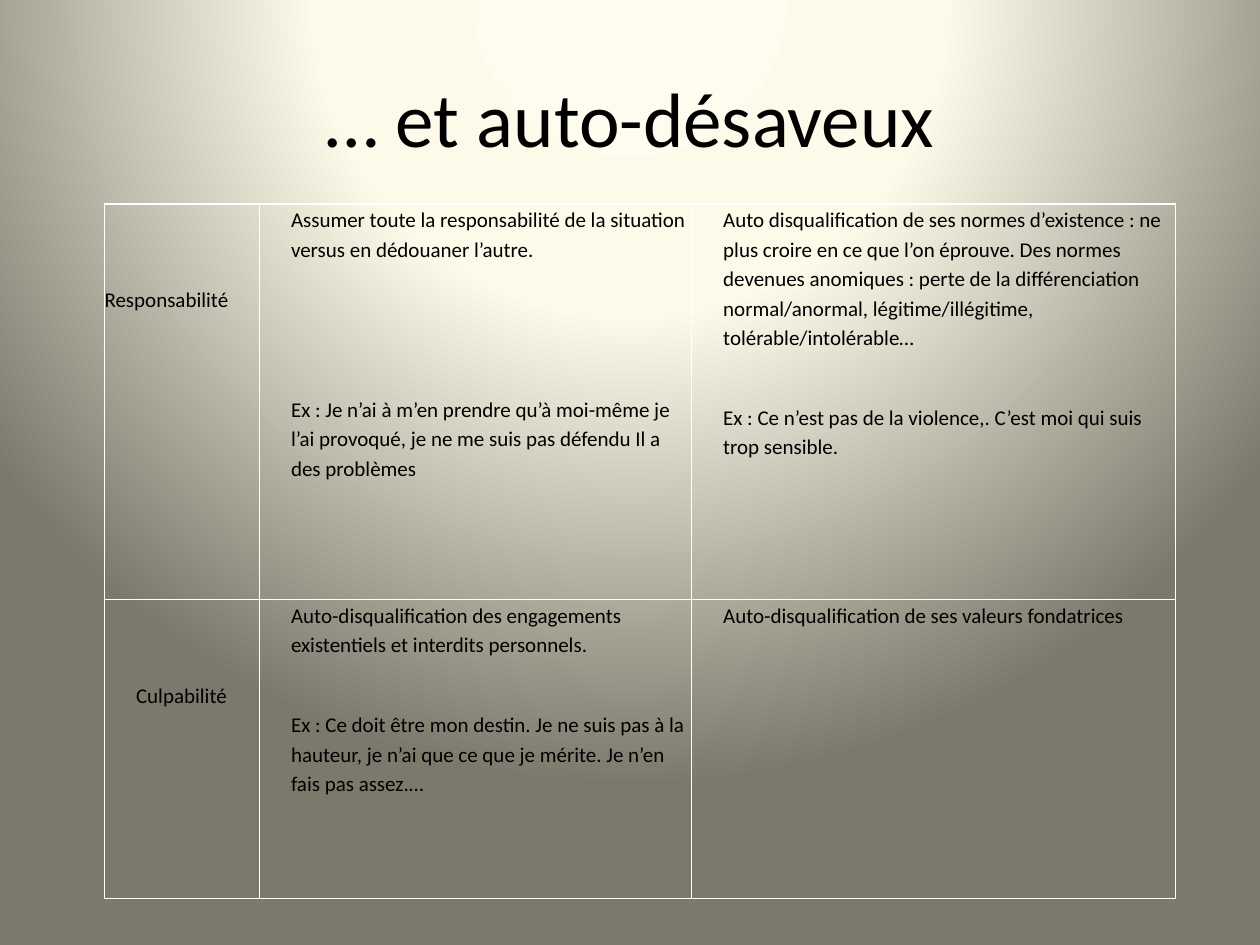
from pptx import Presentation
from pptx.dml.color import RGBColor
from pptx.enum.text import MSO_ANCHOR, PP_ALIGN
from pptx.oxml import parse_xml
from pptx.oxml.ns import nsdecls
from pptx.util import Inches, Pt

COLORS = {
    "text": "000000",
    "border": "FFFFFF",
    "glow": "FEFCEE",
    "cream": "FDFAEA",
    "olive": "7B796B",
}
BODY = {"alignment": PP_ALIGN.LEFT, "line_spacing": 1.15, "space_after": Pt(6)}
LABEL = {**BODY, "alignment": PP_ALIGN.JUSTIFY}
BLANK_LINE = 22.85
COLUMN_WIDTHS = [1.23, 3.43, 3.84]
ROW_HEIGHTS = [3.14, 2.37]
INDENT = 0.25

ROWS = [
    [
        {"texts": ["Responsabilité"], "format": LABEL, "top_lines": 2, "indent": 0},
        {
            "texts": [
                "Assumer toute la responsabilité de la situation versus en dédouaner l’autre.",
                "Ex : Je n’ai à m’en prendre qu’à moi-même je l’ai provoqué, "
                "je ne me suis pas défendu Il a des problèmes",
            ],
            "gap_lines": 3,
        },
        {
            "texts": [
                "Auto disqualification de ses normes d’existence : ne plus croire en ce que "
                "l’on éprouve. Des normes devenues anomiques : perte de la différenciation "
                "normal/anormal, légitime/illégitime, tolérable/intolérable…",
                "Ex : Ce n’est pas de la violence,. C’est moi qui suis trop sensible.",
            ],
        },
    ],
    [
        {"texts": ["Culpabilité"], "format": LABEL, "top_lines": 2},
        {
            "texts": [
                "Auto-disqualification des engagements existentiels et interdits personnels.",
                "Ex : Ce doit être mon destin. Je ne suis pas à la hauteur, "
                "je n’ai que ce que je mérite. Je n’en fais pas assez.…",
            ],
        },
        {"texts": ["Auto-disqualification de ses valeurs fondatrices"]},
    ],
]


def apply(target, values):
    for name, value in values.items():
        setattr(target, name, value)


class SlideBuilder:
    def __init__(self, presentation, font_name):
        self.font_name = font_name
        self.slide = presentation.slides.add_slide(presentation.slide_layouts[5])

    def style_font(self, font, size):
        apply(font, {"name": self.font_name, "size": Pt(size)})
        font.color.rgb = RGBColor.from_string(COLORS["text"])

    def background(self, stops):
        stop_xml = "".join(
            f'<a:gs pos="{percent * 1000}"><a:srgbClr val="{COLORS[color]}"/></a:gs>'
            for percent, color in stops
        )
        self.slide.element.cSld.insert(0, parse_xml(
            f'<p:bg {nsdecls("p", "a")}><p:bgPr><a:gradFill rotWithShape="1">'
            f'<a:gsLst>{stop_xml}</a:gsLst><a:path path="circle">'
            '<a:fillToRect l="50000" t="-80000" r="50000" b="180000"/></a:path>'
            '</a:gradFill><a:effectLst/></p:bgPr></p:bg>'
        ))

    def title(self, text, left, top, width, height, size):
        title = self.slide.shapes.title
        apply(title, {
            "left": Inches(left), "top": Inches(top),
            "width": Inches(width), "height": Inches(height),
        })
        title.text_frame.text = text
        title.text_frame.vertical_anchor = MSO_ANCHOR.MIDDLE
        paragraph = title.text_frame.paragraphs[0]
        paragraph.alignment = PP_ALIGN.CENTER
        self.style_font(paragraph.runs[0].font, size)

    def table(self, rows, left, top):
        table = self.slide.shapes.add_table(
            len(rows), len(COLUMN_WIDTHS), Inches(left), Inches(top),
            Inches(sum(COLUMN_WIDTHS)), Inches(sum(ROW_HEIGHTS)),
        ).table
        apply(table, {"first_row": False, "horz_banding": False})
        for column, width in zip(table.columns, COLUMN_WIDTHS):
            column.width = Inches(width)
        for row, height, contents in zip(table.rows, ROW_HEIGHTS, rows):
            row.height = Inches(height)
            for cell, content in zip(row.cells, contents):
                self.cell(cell, **content)

    def cell(self, cell, texts, format=BODY, top_lines=0, gap_lines=1, indent=INDENT):
        apply(cell, {
            "margin_left": Inches(indent), "margin_right": 0,
            "margin_top": Pt(top_lines * BLANK_LINE), "margin_bottom": 0,
        })
        cell.fill.background()
        self.borders(cell)
        cell.text = "\n".join(texts)
        for index, paragraph in enumerate(cell.text_frame.paragraphs):
            apply(paragraph, format)
            if index:
                paragraph.space_before = Pt(gap_lines * BLANK_LINE)
            self.style_font(paragraph.runs[0].font, 12)

    def borders(self, cell):
        properties = cell._tc.get_or_add_tcPr()
        for position, side in enumerate(("lnL", "lnR", "lnT", "lnB")):
            properties.insert(position, parse_xml(
                f'<a:{side} {nsdecls("a")} w="{Pt(1)}"><a:solidFill>'
                f'<a:srgbClr val="{COLORS["border"]}"/></a:solidFill></a:{side}>'
            ))


def main():
    presentation = Presentation()
    apply(presentation, {"slide_width": Inches(10), "slide_height": Inches(7.5)})
    builder = SlideBuilder(presentation, "Calibri")
    builder.background([(0, "glow"), (40, "cream"), (100, "olive")])
    builder.title("… et auto-désaveux", 0.5, 0.3, 9, 1.25, 44)
    builder.table(ROWS, 0.83, 1.62)
    presentation.save("out.pptx")


if __name__ == "__main__":
    main()
